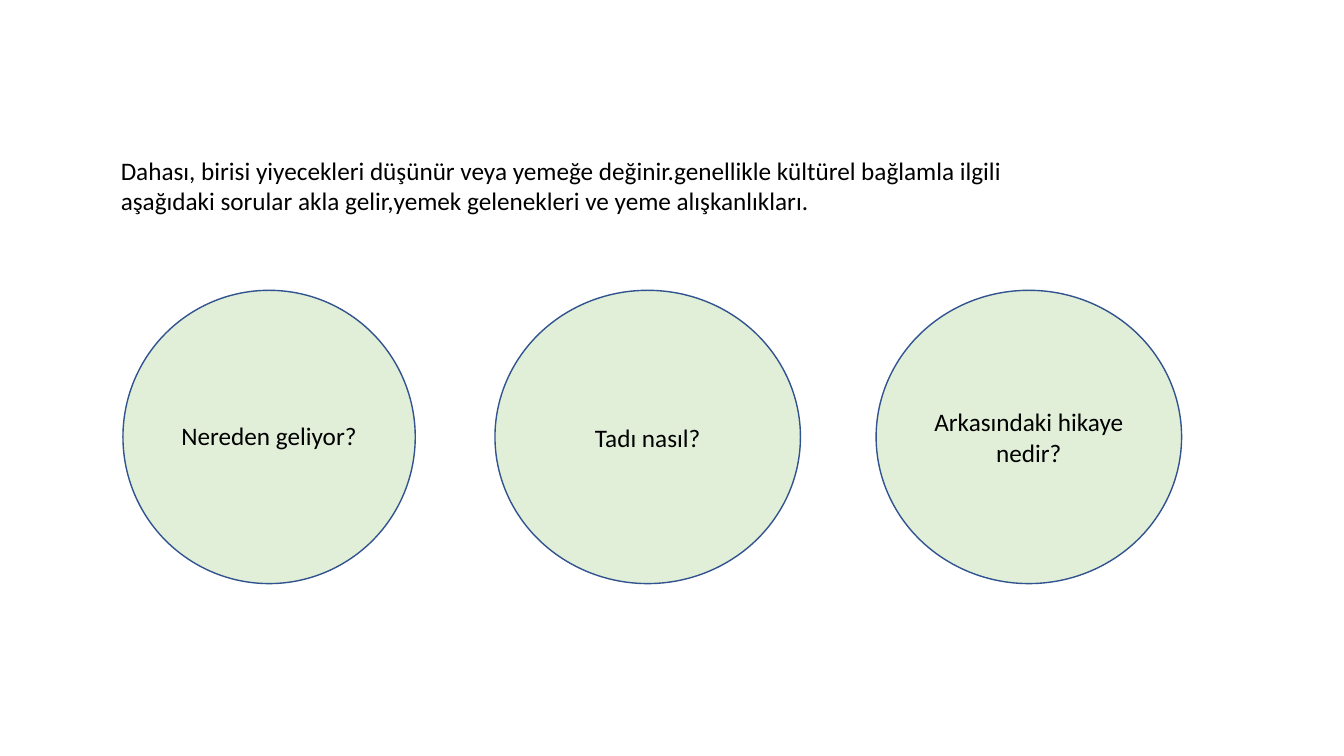
from dataclasses import dataclass

from pptx import Presentation, util as u
from pptx.dml.color import RGBColor
from pptx.enum import shapes, text

BLACK = RGBColor(0x00, 0x00, 0x00)
PALE_GREEN = RGBColor(0xE1, 0xEF, 0xD8)
DARK_BLUE = RGBColor(0x31, 0x53, 0x8F)

SLIDE_WIDTH = u.Inches(13.33)
SLIDE_HEIGHT = u.Inches(7.5)

CIRCLE_TOP = 38.4
CIRCLE_HEIGHT = 38.8


@dataclass(frozen=True)
class Question:
    wording: str
    left: float
    width: float
    line_spacing: float = 1.0


INTRO = (
    "Dahası, birisi yiyecekleri düşünür veya yemeğe değinir.genellikle "
    "kültürel bağlamla ilgili aşağıdaki sorular akla gelir,yemek gelenekleri "
    "ve yeme alışkanlıkları."
)
QUESTIONS = [
    Question("Nereden geliyor?", 9.15, 21.75, 0.9),
    Question("Tadı nasıl?", 36.83, 22.73),
    Question("Arkasındaki hikaye nedir?", 65.19, 22.73),
]


def percent_box(left: float, top: float, width: float, height: float) -> tuple:
    return (
        u.Emu(round(SLIDE_WIDTH * left / 100)),
        u.Emu(round(SLIDE_HEIGHT * top / 100)),
        u.Emu(round(SLIDE_WIDTH * width / 100)),
        u.Emu(round(SLIDE_HEIGHT * height / 100)),
    )


def write(frame, wording: str, *, align=text.PP_ALIGN.LEFT,
          anchor=text.MSO_ANCHOR.TOP, line_spacing: float = 1.0) -> None:
    frame.word_wrap = True
    frame.vertical_anchor = anchor
    paragraph = frame.paragraphs[0]
    paragraph.alignment = align
    paragraph.line_spacing = line_spacing
    run = paragraph.add_run()
    run.text = wording
    run.font.name = "Calibri"
    run.font.size = u.Pt(18)
    run.font.color.rgb = BLACK


def draw_question(slide, question: Question) -> None:
    circle = slide.shapes.add_shape(
        shapes.MSO_SHAPE.OVAL,
        *percent_box(question.left, CIRCLE_TOP, question.width, CIRCLE_HEIGHT),
    )
    circle.shadow.inherit = False
    circle.fill.solid()
    circle.fill.fore_color.rgb = PALE_GREEN
    circle.line.color.rgb = DARK_BLUE
    circle.line.width = u.Pt(1)
    write(circle.text_frame, question.wording, align=text.PP_ALIGN.CENTER,
          anchor=text.MSO_ANCHOR.MIDDLE, line_spacing=question.line_spacing)


def main() -> None:
    deck = Presentation()
    deck.slide_width = SLIDE_WIDTH
    deck.slide_height = SLIDE_HEIGHT
    slide = deck.slides.add_slide(deck.slide_layouts[6])
    for question in QUESTIONS:
        draw_question(slide, question)
    intro = slide.shapes.add_textbox(*percent_box(8.25, 19.87, 70.14, 9.47))
    write(intro.text_frame, INTRO)
    intro.text_frame.auto_size = text.MSO_AUTO_SIZE.SHAPE_TO_FIT_TEXT
    deck.save("out.pptx")


if __name__ == "__main__":
    main()
